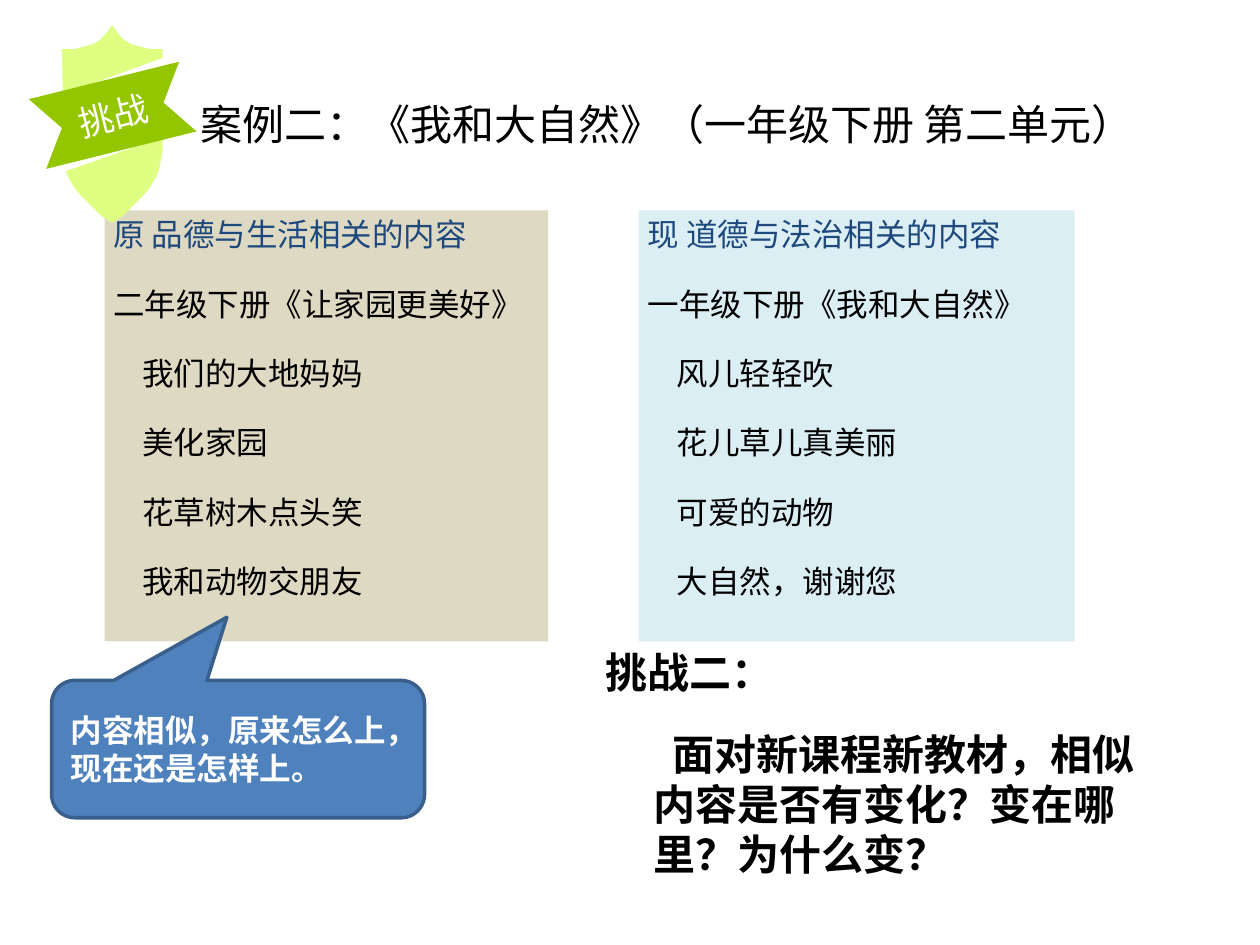
from lxml.etree import SubElement
from pptx import Presentation
from pptx.dml.color import RGBColor
from pptx.enum.shapes import MSO_SHAPE
from pptx.enum.text import MSO_ANCHOR, PP_ALIGN
from pptx.oxml.ns import qn
from pptx.util import Inches, Pt

COLORS = {
    "text": "000000", "heading": "1F497D", "white": "FFFFFF",
    "sand": "DDD9C3", "sky": "DBEEF4", "callout": "4F81BD",
    "callout_line": "3A5F8C", "shield": "DFFF82", "ribbon": "94C600",
}
SANS = "Noto Sans CJK SC"
HANG = 0.38

HEADLINE = "案例二：《我和大自然》（一年级下册 第二单元）"
PANELS = [
    (0.83, 3.52, "sand", "原 品德与生活相关的内容", "二年级下册《让家园更美好》",
     ["我们的大地妈妈", "美化家园", "花草树木点头笑", "我和动物交朋友"]),
    (5.07, 3.46, "sky", "现 道德与法治相关的内容", "一年级下册《我和大自然》",
     ["风儿轻轻吹", "花儿草儿真美丽", "可爱的动物", "大自然，谢谢您"]),
]
CALLOUT = "内容相似，原来怎么上，现在还是怎样上。"
CHALLENGE = "挑战二："
QUESTION = "面对新课程新教材，相似内容是否有变化？变在哪里？为什么变？"
BADGE = "挑战"

SHIELD_AXIS = 0.89
CREST = [(0, 0.2), (0.02, 0.23), (0.06, 0.28), (0.1, 0.32), (0.15, 0.35),
         (0.22, 0.37), (0.3, 0.39), (0.4, 0.39)]
FLANK = [(0.4, 1.2), (0.39, 1.26), (0.37, 1.36), (0.34, 1.42), (0.3, 1.49),
         (0.25, 1.55), (0.18, 1.62), (0.09, 1.71), (0, 1.77)]
RIBBON = [(0.28, 0.63), (1.51, 0.63), (1.31, 0.915),
          (1.51, 1.2), (0.28, 1.2), (0.48, 0.915)]


def box(left, top, width, height):
    return [Inches(v) for v in (left, top, width, height)]


def paint(shape, fill):
    shape.shadow.inherit = False
    shape.fill.solid()
    shape.fill.fore_color.rgb = RGBColor.from_string(COLORS[fill])
    shape.line.fill.background()


def write(frame, rows, size, font=SANS, bold=False, align=PP_ALIGN.LEFT, gap=0):
    frame.word_wrap = True
    frame.text = "\n".join(row[0] for row in rows)
    for i, (paragraph, (_, color, margin, indent)) in enumerate(zip(frame.paragraphs, rows)):
        paragraph.alignment = align
        paragraph.space_before = Pt(gap if i else 0)
        properties = paragraph._p.get_or_add_pPr()
        properties.set("marL", str(Inches(margin)))
        properties.set("indent", str(Inches(indent)))
        SubElement(properties, qn("a:buNone"))
        for run in paragraph.runs:
            run.font.size = Pt(size)
            run.font.name = font
            run.font.bold = bold
            run.font.color.rgb = RGBColor.from_string(COLORS[color])


def outline(shapes, contours, fill):
    builder = None
    for contour in contours:
        start, *rest = [(Inches(x), Inches(y)) for x, y in contour]
        if builder is None:
            builder = shapes.build_freeform(*start)
        else:
            builder.move_to(*start)
        builder.add_line_segments(rest, close=True)
    shape = builder.convert_to_shape()
    paint(shape, fill)
    return shape


def side(points, sign):
    return [(SHIELD_AXIS + sign * x, y) for x, y in points]


prs = Presentation()
prs.slide_width, prs.slide_height = Inches(10), Inches(7.5)
slide = prs.slides.add_slide(prs.slide_layouts[5])
shapes = slide.shapes

headline = shapes.title
headline.left, headline.top, headline.width, headline.height = box(1.49, 0.73, 9.13, 0.47)
write(headline.text_frame, [(HEADLINE, "text", HANG, -HANG)], 24, "Arial")
headline.text_frame.vertical_anchor = MSO_ANCHOR.TOP

for left, width, fill, heading, unit, lessons in PANELS:
    panel = shapes.add_shape(MSO_SHAPE.RECTANGLE, *box(left, 1.67, width, 3.42))
    paint(panel, fill)
    frame = panel.text_frame
    frame.vertical_anchor = MSO_ANCHOR.TOP
    frame.margin_left = frame.margin_right = Inches(0.07)
    frame.margin_top = frame.margin_bottom = Inches(0.04)
    rows = [(heading, "heading", HANG, -HANG), (unit, "text", HANG, -HANG)]
    rows += [(lesson, "text", 0.23, 0) for lesson in lessons]
    write(frame, rows, 18, gap=18)

callout = shapes.add_shape(MSO_SHAPE.ROUNDED_RECTANGULAR_CALLOUT, *box(0.41, 5.4, 2.96, 1.09))
paint(callout, "callout")
for i, value in enumerate((-0.03, -0.96, 0.17)):
    callout.adjustments[i] = value
callout.line.color.rgb = RGBColor.from_string(COLORS["callout_line"])
callout.line.width = Pt(2)
callout.text_frame.vertical_anchor = MSO_ANCHOR.MIDDLE
write(callout.text_frame, [(CALLOUT, "white", 0, 0)], 18, "Calibri", bold=True)

challenge = shapes.add_textbox(*box(4.71, 5.08, 4.46, 2.16))
write(challenge.text_frame,
      [(CHALLENGE, "text", HANG, -HANG), (QUESTION, "text", HANG, 0.15)],
      24, bold=True, gap=18)

upper = side(CREST, 1) + [(1.29, 0.46), (0.5, 0.75)] + side(CREST[:0:-1], -1)
lower = [(1.29, 1.09)] + side(FLANK, 1) + side(FLANK[-2:1:-1], -1)
badge = shapes.add_group_shape()
outline(badge.shapes, [lower, upper], "shield")
ribbon = outline(badge.shapes, [RIBBON], "ribbon")
ribbon.rotation = 346
ribbon.text_frame.vertical_anchor = MSO_ANCHOR.MIDDLE
write(ribbon.text_frame, [(BADGE, "white", 0, 0)], 20, align=PP_ALIGN.CENTER)

prs.save("out.pptx")
